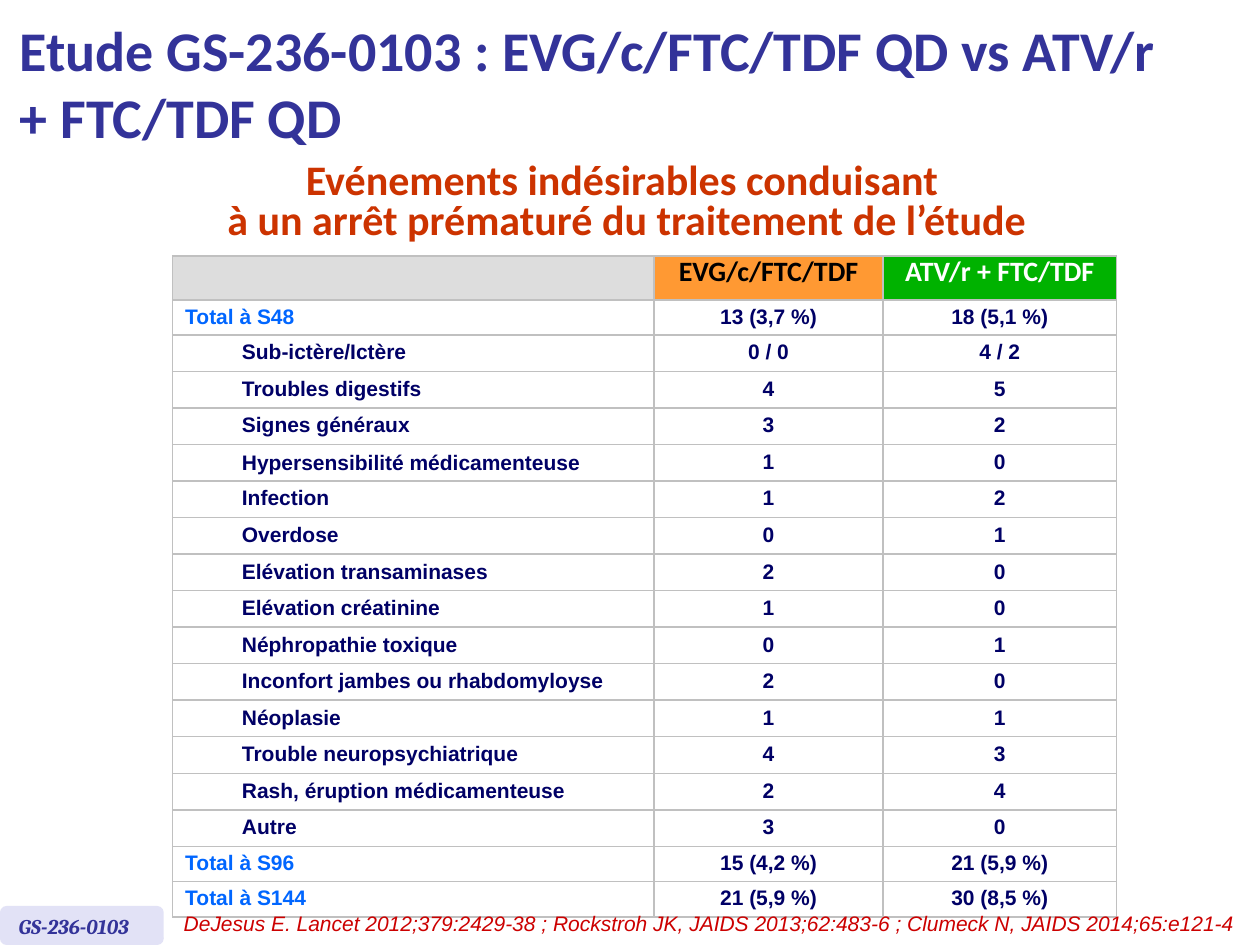
from dataclasses import dataclass

from lxml import etree
from pptx import Presentation
from pptx import util as u
from pptx.dml.color import RGBColor
from pptx.enum import shapes, text
from pptx.oxml import ns


@dataclass(frozen=True)
class Theme:
    title: str = "333399"
    subtitle: str = "CC3300"
    reference: str = "CC0000"
    tag: str = "E2E2F6"
    border: str = "C0C0C0"
    blank_header: str = "DDDDDD"
    evg: str = "FF9933"
    atv: str = "00B200"
    white: str = "FFFFFF"
    black: str = "000000"
    total: str = "0066FF"
    body: str = "000066"
    title_size: int = 32
    subtitle_size: int = 24
    header_size: int = 16
    body_size: int = 12
    empty_size: int = 8
    heading_font: str = "Calibri"
    body_font: str = "Arial"
    tag_font: str = "Cambria"


THEME = Theme()
CENTER = text.PP_ALIGN.CENTER
MIDDLE = text.MSO_ANCHOR.MIDDLE
COLUMNS = (0.45, 3.37, 1.82, 1.85)
HEADER_HEIGHT, EVENT_HEIGHT, TOTAL_HEIGHT = 0.35, 0.29, 0.28
LINE_PITCH = 12.5

ROWS = (
    ("Total à S48", "13 (3,7 %)", "18 (5,1 %)"),
    ("Sub-ictère/Ictère", "0 / 0", "4 / 2"),
    ("Troubles digestifs", "4", "5"),
    ("Signes généraux", "3", "2"),
    ("Hypersensibilité médicamenteuse", "1", "0"),
    ("Infection", "1", "2"),
    ("Overdose", "0", "1"),
    ("Elévation transaminases", "2", "0"),
    ("Elévation créatinine", "1", "0"),
    ("Néphropathie toxique", "0", "1"),
    ("Inconfort jambes ou rhabdomyloyse", "2", "0"),
    ("Néoplasie", "1", "1"),
    ("Trouble neuropsychiatrique", "4", "3"),
    ("Rash, éruption médicamenteuse", "2", "4"),
    ("Autre", "3", "0"),
    ("Total à S96", "15 (4,2 %)", "21 (5,9 %)"),
    ("Total à S144", "21 (5,9 %)", "30 (8,5 %)"),
)


def inches(values):
    return [u.Inches(value) for value in values]


def is_total(label):
    return label.startswith("Total")


def write(frame, content, size, font, color, align=None, pitch=None, **style):
    """Fill the first paragraph; a vertical tab in content is a line break."""
    paragraph = frame.paragraphs[0]
    paragraph.text = content
    paragraph.alignment = align
    if pitch:
        paragraph.line_spacing = u.Pt(pitch)
    for run in paragraph.runs:
        run.font.color.rgb = RGBColor.from_string(color)
        for name, value in {"size": u.Pt(size), "name": font, **style}.items():
            setattr(run.font, name, value)


def add_text(slide, box, content, size, font, color, anchor=None, **style):
    frame = slide.shapes.add_textbox(*inches(box)).text_frame
    frame.word_wrap = True
    frame.vertical_anchor = anchor
    write(frame, content, size, font, color, **style)


def format_cell(cell, fill, sides="LRTB"):
    properties = cell._tc.get_or_add_tcPr()
    for side in "LRTB":
        line = etree.SubElement(properties, ns.qn(f"a:ln{side}"), w=str(u.Pt(1)))
        if side in sides:
            solid = etree.SubElement(line, ns.qn("a:solidFill"))
            etree.SubElement(solid, ns.qn("a:srgbClr"), val=THEME.border)
        else:
            etree.SubElement(line, ns.qn("a:noFill"))
    cell.fill.solid()
    cell.fill.fore_color.rgb = RGBColor.from_string(fill)
    cell.vertical_anchor = MIDDLE


def shrink_empty_cell(cell):
    """Keep an empty cell from stretching its row."""
    paragraph = cell.text_frame.paragraphs[0]._p
    etree.SubElement(paragraph, ns.qn("a:endParaRPr"),
                     sz=str(THEME.empty_size * 100))


def fill_header(cells):
    cells[0].merge(cells[1])
    for cell in cells[:2]:
        format_cell(cell, THEME.blank_header)
        shrink_empty_cell(cell)
    headings = (("EVG/c/FTC/TDF", THEME.evg, THEME.black),
                ("ATV/r + FTC/TDF", THEME.atv, THEME.white))
    for cell, (content, fill, color) in zip(cells[2:], headings):
        format_cell(cell, fill)
        write(cell.text_frame, content, THEME.header_size, THEME.heading_font,
              color, CENTER, LINE_PITCH, bold=True)


def fill_row(cells, label, values):
    """Totals span the two label columns; events are indented by the first."""
    total = is_total(label)
    if total:
        cells[0].merge(cells[1])
    shrink_empty_cell(cells[1] if total else cells[0])
    borders = ("LRTB",) * 4 if total else ("LTB", "RTB", "LRTB", "LRTB")
    for cell, sides in zip(cells, borders):
        format_cell(cell, THEME.white, sides)
    label_cell = cells[0] if total else cells[1]
    pitch = LINE_PITCH + 1 if label.startswith("Hypersensibilité") else LINE_PITCH
    write(label_cell.text_frame, label, THEME.body_size, THEME.body_font,
          THEME.total if total else THEME.body, pitch=pitch, bold=True)
    for cell, value in zip(cells[2:], values):
        write(cell.text_frame, value, THEME.body_size, THEME.body_font,
              THEME.body, CENTER, LINE_PITCH, bold=True)


def add_event_table(slide, left, top):
    heights = [HEADER_HEIGHT] + [TOTAL_HEIGHT if is_total(label) else EVENT_HEIGHT
                                 for label, *_ in ROWS]
    box = inches((left, top, sum(COLUMNS), sum(heights)))
    table = slide.shapes.add_table(len(heights), len(COLUMNS), *box).table
    table.horz_banding = table.first_row = False
    for column, width in zip(table.columns, COLUMNS):
        column.width = u.Inches(width)
    for row, height in zip(table.rows, heights):
        row.height = u.Inches(height)
    header, *body = [list(row.cells) for row in table.rows]
    fill_header(header)
    for cells, (label, *values) in zip(body, ROWS):
        fill_row(cells, label, values)


def add_headings(slide, left, top):
    add_text(slide, (left, top + 1.2, 9.87, 0.51),
             "Evénements indésirables conduisant \v"
             "à un arrêt prématuré du traitement de l’étude",
             THEME.subtitle_size, THEME.heading_font, THEME.subtitle,
             align=CENTER, pitch=22.8, bold=True)
    add_text(slide, (left + 0.02, top, 9.55, 1.21),
             "Etude GS-236-0103 : EVG/c/FTC/TDF QD vs ATV/r \v+ FTC/TDF QD",
             THEME.title_size, THEME.heading_font, THEME.title,
             anchor=MIDDLE, bold=True)


def add_footer(slide, left, top):
    add_text(slide, (left + 1.26, top, 8.69, 0.3),
             "DeJesus E. Lancet 2012;379:2429-38 ; Rockstroh JK, "
             "JAIDS 2013;62:483-6 ; Clumeck N, JAIDS 2014;65:e121-4 ",
             THEME.body_size, THEME.body_font, THEME.reference,
             align=text.PP_ALIGN.RIGHT, italic=True)
    tag = slide.shapes.add_shape(shapes.MSO_SHAPE.ROUNDED_RECTANGLE,
                                 *inches((left, top + 0.01, 1.3, 0.31)))
    tag.shadow.inherit = False
    tag.fill.solid()
    tag.fill.fore_color.rgb = RGBColor.from_string(THEME.tag)
    tag.line.fill.background()
    add_text(slide, (left + 0.05, top + 0.02, 1.2, 0.3), "GS-236-0103",
             THEME.body_size, THEME.tag_font, THEME.title,
             bold=True, italic=True)


def main():
    presentation = Presentation()
    presentation.slide_width, presentation.slide_height = inches((10, 7.5))
    slide = presentation.slides.add_slide(presentation.slide_layouts[6])
    add_event_table(slide, 1.37, 2.03)
    add_footer(slide, 0, 7.18)
    add_headings(slide, 0.04, 0.05)
    presentation.save("out.pptx")


if __name__ == "__main__":
    main()
